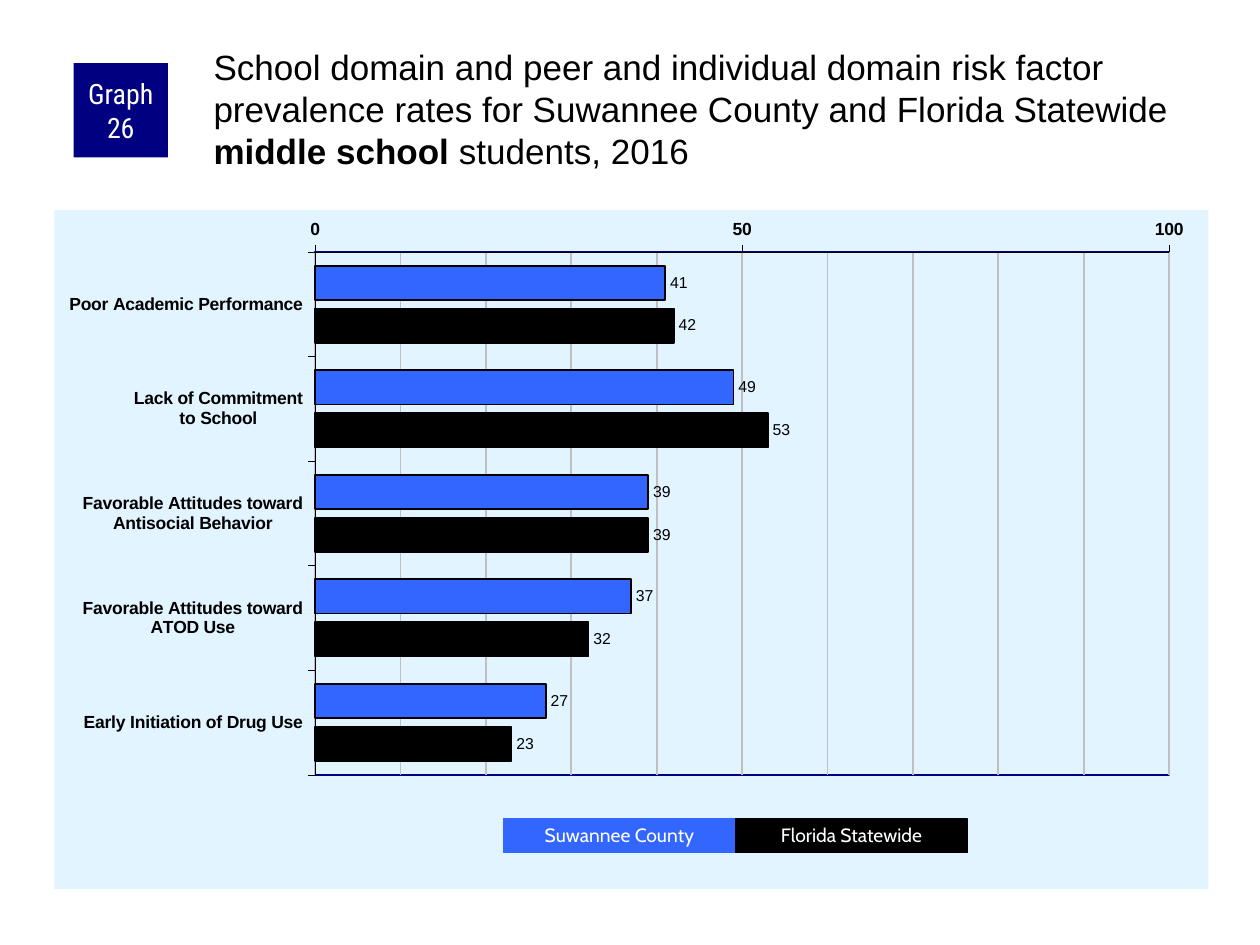
import copy
import dataclasses

import pptx
import pptx.chart.data
import pptx.dml.color
import pptx.enum.chart
import pptx.enum.shapes
import pptx.enum.text
import pptx.oxml
import pptx.oxml.ns
import pptx.util

Pt = pptx.util.Pt


@dataclasses.dataclass(frozen=True)
class Theme:
    ink: str = "000000"
    paper: str = "FFFFFF"
    navy: str = "000080"
    county: str = "3366FF"
    state: str = "000000"
    panel: str = "E1F4FF"
    grid: str = "C0C0C0"
    body_font: str = "Arial"
    badge_font: str = "Roboto Condensed"
    key_font: str = "Cabin"
    title_size: float = 20
    badge_size: float = 16
    key_size: float = 11
    axis_size: float = 10
    value_size: float = 9


class GraphSlide:
    """Holds the theme and the current slide, with a method for each kind of element."""

    def __init__(self, deck, theme):
        self.theme = theme
        self.slide = deck.slides.add_slide(deck.slide_layouts[5])

    def color(self, value):
        return pptx.dml.color.RGBColor.from_string(value)

    def style_font(self, font, size, color, name, bold=False):
        font.size, font.name, font.bold = Pt(size), name, bold
        font.color.rgb = self.color(color)

    def style_line(self, line, color, width):
        line.color.rgb = self.color(color)
        line.width = Pt(width)

    def title(self, box, runs):
        heading = self.slide.shapes.title
        heading.left, heading.top, heading.width, heading.height = map(Pt, box)
        frame = heading.text_frame
        frame.word_wrap = True
        frame.auto_size = pptx.enum.text.MSO_AUTO_SIZE.NONE
        frame.vertical_anchor = pptx.enum.text.MSO_ANCHOR.TOP
        frame.margin_left = frame.margin_top = Pt(2)
        frame.margin_right = frame.margin_bottom = Pt(0)
        paragraph = frame.paragraphs[0]
        paragraph.alignment = pptx.enum.text.PP_ALIGN.LEFT
        paragraph.line_spacing = Pt(24)
        for wording, bold in runs:
            run = paragraph.add_run()
            run.text = wording
            self.style_font(run.font, self.theme.title_size, self.theme.ink,
                            self.theme.body_font, bold)

    def block(self, box, wording, fill, size, font, margins, spacing=1.0, outline=None):
        block = self.slide.shapes.add_shape(
            pptx.enum.shapes.MSO_SHAPE.RECTANGLE, *map(Pt, box))
        block.shadow.inherit = False
        block.fill.solid()
        block.fill.fore_color.rgb = self.color(fill)
        if outline:
            self.style_line(block.line, fill, outline)
        else:
            block.line.fill.background()
        frame = block.text_frame
        frame.word_wrap = True
        frame.vertical_anchor = pptx.enum.text.MSO_ANCHOR.MIDDLE
        frame.margin_left = frame.margin_right = Pt(margins[0])
        frame.margin_top = frame.margin_bottom = Pt(margins[1])
        paragraph = frame.paragraphs[0]
        paragraph.alignment = pptx.enum.text.PP_ALIGN.CENTER
        paragraph.line_spacing = spacing
        run = paragraph.add_run()
        run.text = wording
        self.style_font(run.font, size, self.theme.paper, font)

    def bar_chart(self, box, factors, rates, colors, plot_box):
        theme = self.theme
        data = pptx.chart.data.CategoryChartData()
        data.categories = factors
        for name, values in rates.items():
            data.add_series(name, values)
        chart = self.slide.shapes.add_chart(
            pptx.enum.chart.XL_CHART_TYPE.BAR_CLUSTERED, *map(Pt, box), data).chart
        chart.has_legend = chart.has_title = False
        self.style_font(chart.font, theme.axis_size, theme.ink, theme.body_font)
        plot = chart.plots[0]
        plot.gap_width, plot.overlap, plot.vary_by_categories = 80, -25, False
        for series, color in zip(plot.series, colors):
            self.style_series(series, color)
        self.style_axes(chart)
        self.style_areas(chart, plot_box)

    def style_series(self, series, color):
        theme = self.theme
        series.invert_if_negative = False
        series.format.fill.solid()
        series.format.fill.fore_color.rgb = self.color(color)
        self.style_line(series.format.line, theme.ink, 1)
        labels = series.data_labels
        labels.show_value = True
        labels.position = pptx.enum.chart.XL_LABEL_POSITION.OUTSIDE_END
        self.style_font(labels.font, theme.value_size, theme.ink, theme.body_font)

    def style_axes(self, chart):
        theme = self.theme
        factor_axis, rate_axis = chart.category_axis, chart.value_axis
        for axis in (factor_axis, rate_axis):
            self.style_font(axis.tick_labels.font, theme.axis_size, theme.ink,
                            theme.body_font, True)
            self.style_line(axis.format.line, theme.ink, 0.25)
            axis.major_tick_mark = pptx.enum.chart.XL_TICK_MARK.OUTSIDE
            axis.minor_tick_mark = pptx.enum.chart.XL_TICK_MARK.NONE
        factor_axis.reverse_order = True
        factor_axis.crosses = pptx.enum.chart.XL_AXIS_CROSSES.MAXIMUM
        rate_axis.minimum_scale, rate_axis.maximum_scale = 0, 100
        rate_axis.major_unit, rate_axis.minor_unit = 50, 10
        rate_axis.has_major_gridlines = rate_axis.has_minor_gridlines = True
        self.style_line(rate_axis.major_gridlines.format.line, theme.grid, 1)
        qn = pptx.oxml.ns.qn
        major_style = next(chart.element.iter(qn("c:majorGridlines"))).find(qn("c:spPr"))
        next(chart.element.iter(qn("c:minorGridlines"))).append(copy.deepcopy(major_style))

    def style_areas(self, chart, plot_box):
        names = pptx.oxml.ns.nsdecls("c", "a")
        fill = f'<a:solidFill><a:srgbClr val="{self.theme.panel}"/></a:solidFill>'
        border = f'<a:solidFill><a:srgbClr val="{self.theme.navy}"/></a:solidFill>'
        space = chart.element
        plot_area = next(space.iter(pptx.oxml.ns.qn("c:plotArea")))
        plot_area.getparent().addnext(pptx.oxml.parse_xml(
            f'<c:spPr {names}>{fill}<a:ln><a:noFill/></a:ln></c:spPr>'))
        plot_area.append(pptx.oxml.parse_xml(
            f'<c:spPr {names}><a:noFill/><a:ln w="12700">{border}</a:ln></c:spPr>'))
        for layout in plot_area.findall(pptx.oxml.ns.qn("c:layout")):
            plot_area.remove(layout)
        modes = '<c:layoutTarget val="inner"/><c:xMode val="edge"/><c:yMode val="edge"/>'
        extents = "".join(f'<c:{side} val="{share}"/>' for side, share in zip("xywh", plot_box))
        plot_area.insert(0, pptx.oxml.parse_xml(
            f'<c:layout {names}><c:manualLayout>{modes}{extents}</c:manualLayout></c:layout>'))


def main():
    theme = Theme()
    deck = pptx.Presentation()
    deck.slide_width, deck.slide_height = Pt(720), Pt(540)
    graph = GraphSlide(deck, theme)
    graph.title((120, 24, 570, 60), [
        ("School domain and peer and individual domain risk factor prevalence rates "
         "for Suwannee County and Florida Statewide ", False),
        ("middle school", True),
        (" students, 2016", False),
    ])
    factors = [
        "Poor Academic Performance",
        "Lack of Commitment\nto School",
        "Favorable Attitudes toward\nAntisocial Behavior",
        "Favorable Attitudes toward\nATOD Use",
        "Early Initiation of Drug Use",
    ]
    rates = {"Series 1": (41, 49, 39, 37, 27), "Series 2": (42, 53, 39, 32, 23)}
    areas = [("Suwannee County", theme.county), ("Florida Statewide", theme.state)]
    graph.bar_chart((31, 120, 659.5, 388), factors, rates,
                    [color for _, color in areas], (0.226, 0.062, 0.74, 0.77))
    graph.block((42, 36, 54, 54), "Graph 26", theme.navy, theme.badge_size,
                theme.badge_font, (3.6, 0))
    key_left, key_width = 287.7, 132.6
    for index, (area, color) in enumerate(areas):
        graph.block((key_left + index * key_width, 468, key_width, 19.4), area, color,
                    theme.key_size, theme.key_font, (7.2, 3.6), 0.9, 0.75)
    deck.save("out.pptx")


if __name__ == "__main__":
    main()
